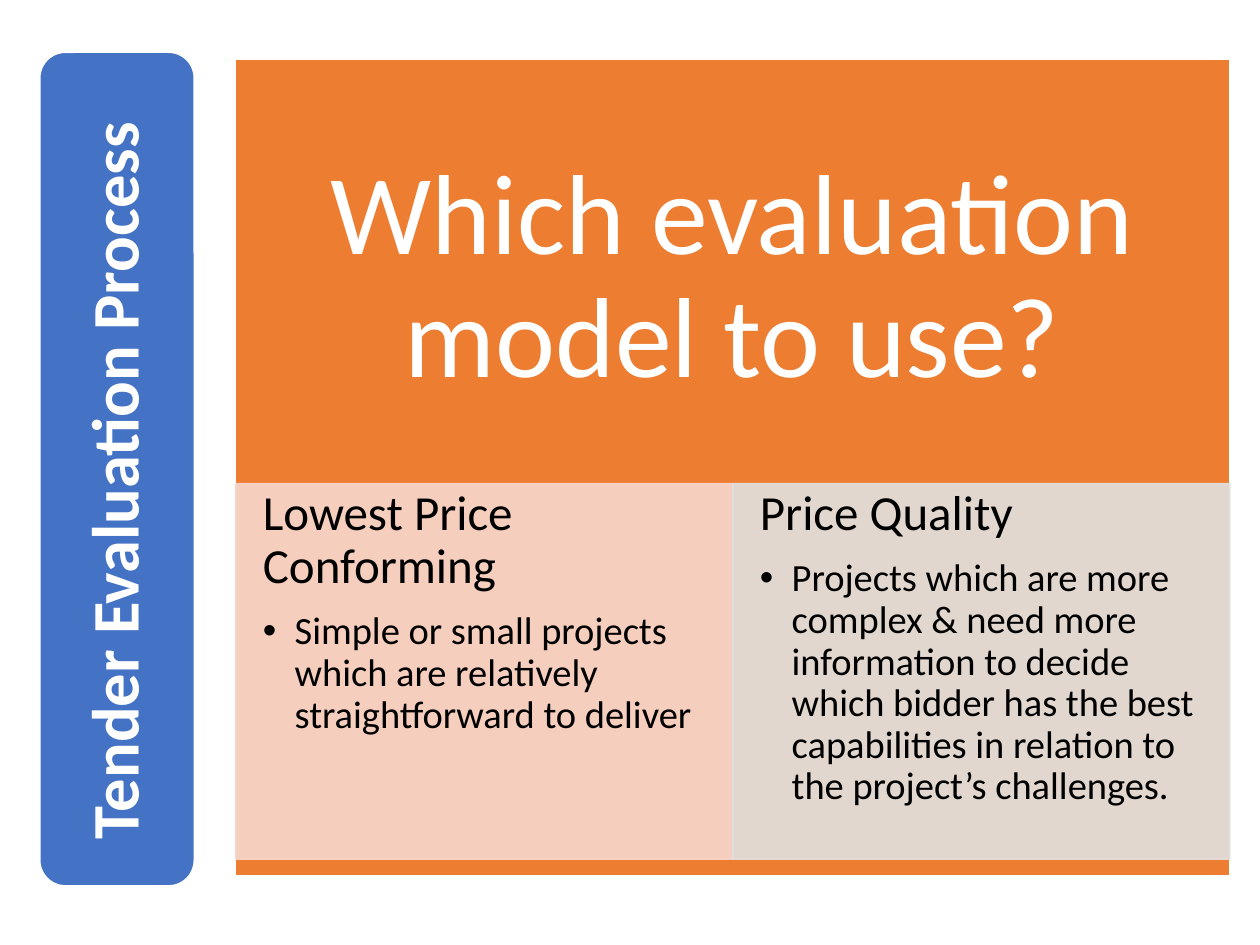
from lxml import etree
from pptx import Presentation
from pptx.dml.color import RGBColor
from pptx.enum.shapes import MSO_SHAPE
from pptx.enum.text import MSO_ANCHOR, MSO_AUTO_SIZE, PP_ALIGN
from pptx.oxml.ns import qn
from pptx.util import Cm, Pt

RECT, ROUNDED = MSO_SHAPE.RECTANGLE, MSO_SHAPE.ROUNDED_RECTANGLE
TOP, MIDDLE = MSO_ANCHOR.TOP, MSO_ANCHOR.MIDDLE
LEFT, CENTER = PP_ALIGN.LEFT, PP_ALIGN.CENTER
NO_AUTOFIT = MSO_AUTO_SIZE.NONE

FONT = "Calibri"
TWO_CONTENT = 3
WHITE = RGBColor(0xFF, 0xFF, 0xFF)
BLACK = RGBColor(0x00, 0x00, 0x00)
BLUE = RGBColor(0x44, 0x72, 0xC4)
ORANGE = RGBColor(0xED, 0x7D, 0x31)
PEACH = RGBColor(0xF8, 0xD7, 0xCE)
GREY = RGBColor(0xE1, 0xE1, 0xE1)

COLUMNS = [
    ("Lowest Price Conforming",
     "Simple or small projects which are relatively straightforward to deliver",
     PEACH),
    ("Price Quality",
     "Projects which are more complex & need more information to decide which "
     "bidder has the best capabilities in relation to the project’s challenges.",
     GREY),
]


def place(sp, left, top, width, height):
    sp.left, sp.top, sp.width, sp.height = left, top, width, height


def paint(sp, fill, line):
    sp.fill.solid()
    sp.fill.fore_color.rgb = fill
    sp.line.color.rgb = line
    sp.line.width = Pt(1)


def set_opacity(sp, percent):
    for color in sp.element.spPr.iter(qn("a:srgbClr")):
        etree.SubElement(color, qn("a:alpha")).set("val", str(percent * 1000))


def set_frame(tf, anchor, inset_x, inset_y):
    tf.word_wrap = True
    tf.auto_size = NO_AUTOFIT
    tf.vertical_anchor = anchor
    tf.margin_left = tf.margin_right = inset_x
    tf.margin_top = tf.margin_bottom = inset_y


def format_paragraph(p, size, color, align=LEFT, after=0.35, bold=False):
    p.alignment = align
    p.line_spacing = 0.9
    p.space_before = Pt(0)
    p.space_after = Pt(round(size * after, 1))
    for r in p.runs:
        r.font.name = FONT
        r.font.size = Pt(size)
        r.font.bold = bold
        r.font.color.rgb = color


def set_bullet(p, char=None, indent=0):
    pPr = p._p.get_or_add_pPr()
    pPr.set("marL", str(indent))
    pPr.set("indent", str(-indent))
    if char:
        etree.SubElement(pPr, qn("a:buChar")).set("char", char)
    else:
        etree.SubElement(pPr, qn("a:buNone"))


def add_process_bar(s, left, top, width, height):
    # Drawn lying down, then turned about its centre to read upwards
    shift = (height - width) // 2
    sp = s.shapes.add_shape(ROUNDED, left - shift, top + shift, height, width)
    sp.rotation = 270
    sp.shadow.inherit = False
    paint(sp, BLUE, WHITE)
    tf = sp.text_frame
    tf.text = "Tender Evaluation Process"
    set_frame(tf, MIDDLE, Cm(0.79), 0)
    format_paragraph(tf.paragraphs[0], 38, WHITE, bold=True)


def fill_column(sp, box, heading, detail, color):
    place(sp, *box)
    paint(sp, color, color)
    set_opacity(sp, 90)
    tf = sp.text_frame
    set_frame(tf, TOP, Cm(0.55), Cm(0.1))
    p = tf.paragraphs[0]
    p.text = heading
    format_paragraph(p, 28, BLACK)
    set_bullet(p)
    p = tf.add_paragraph()
    p.text = detail
    p.level = 1
    format_paragraph(p, 22, BLACK, after=0.15)
    set_bullet(p, "•", Cm(0.64))


def add_question_panel(s, left, top, width, height):
    # Orange panel behind the placeholders
    panel = s.shapes.add_shape(RECT, left, top, width, height)
    panel.shadow.inherit = False
    paint(panel, ORANGE, WHITE)
    title = s.shapes.title
    title.element.addprevious(panel.element)

    # Question
    place(title, left, top, width, Cm(8.89))
    title.text_frame.text = "Which evaluation model to use?"
    set_frame(title.text_frame, MIDDLE, Cm(1.3), Cm(1.3))
    format_paragraph(title.text_frame.paragraphs[0], 65, WHITE, CENTER)

    # Two equal answer columns
    column_width = width // len(COLUMNS)
    for i, column in enumerate(COLUMNS):
        box = (left + i * column_width, top + Cm(8.56), column_width, Cm(7.57))
        fill_column(s.placeholders[i + 1], box, *column)


def main():
    prs = Presentation()
    prs.slide_width, prs.slide_height = Cm(25.4), Cm(19.05)
    s = prs.slides.add_slide(prs.slide_layouts[TWO_CONTENT])
    add_question_panel(s, Cm(4.75), Cm(1.19), Cm(20.04), Cm(16.46))
    add_process_bar(s, Cm(0.8), Cm(1.05), Cm(3.12), Cm(16.81))
    prs.save("out.pptx")


if __name__ == "__main__":
    main()
